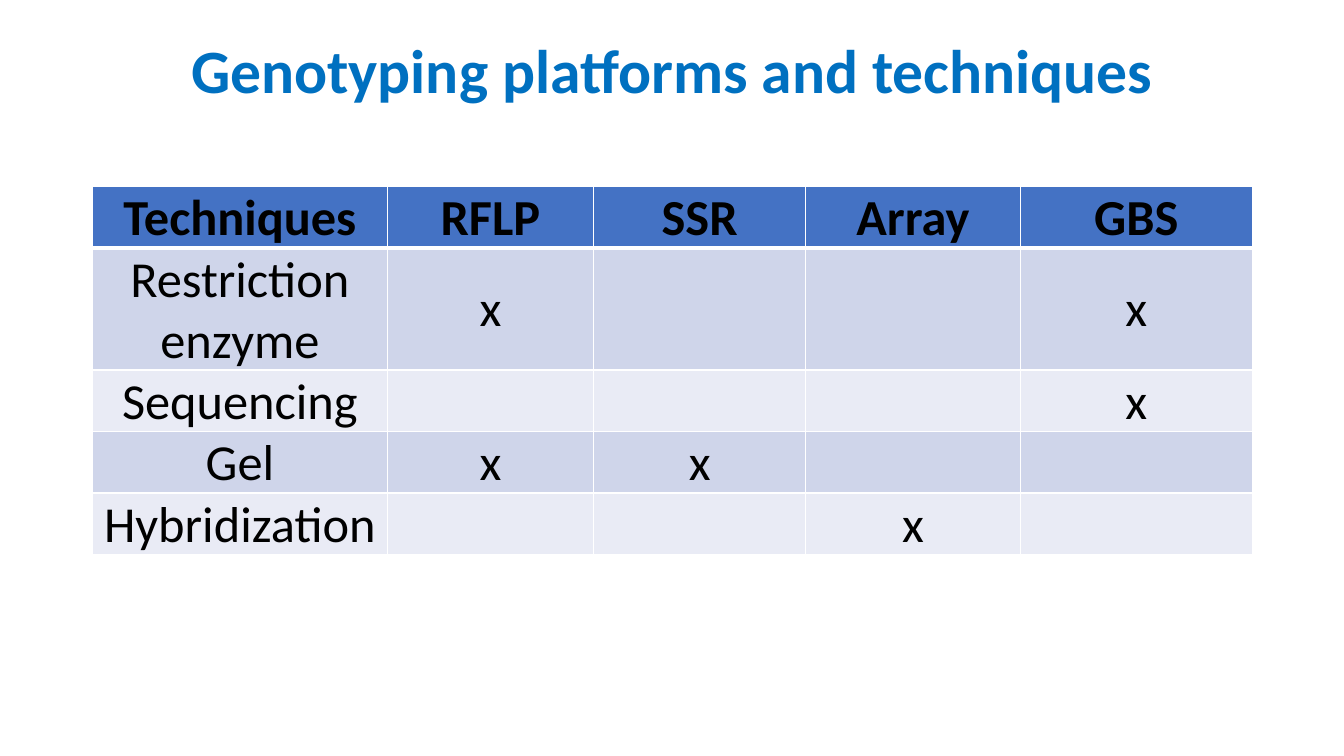
from lxml.etree import SubElement
from pptx import Presentation
from pptx.dml.color import RGBColor
from pptx.enum.text import MSO_ANCHOR, PP_ALIGN
from pptx.oxml.ns import qn
from pptx.util import Pt

BLUE = RGBColor(0x00, 0x70, 0xC0)
BLACK = RGBColor(0x00, 0x00, 0x00)
WHITE = RGBColor(0xFF, 0xFF, 0xFF)
HEADER = RGBColor(0x44, 0x72, 0xC4)
BANDS = [RGBColor(0xE9, 0xEB, 0xF5), RGBColor(0xCF, 0xD5, 0xEA)]

PLATFORMS = ["RFLP", "SSR", "Array", "GBS"]
TECHNIQUES = {
    "Restriction enzyme": ["RFLP", "GBS"],
    "Sequencing": ["GBS"],
    "Gel": ["RFLP", "SSR"],
    "Hybridization": ["Array"],
}
COLUMN_WIDTHS = [292, 205, 210, 213, 230]
ROW_HEIGHT = 41


class SlideBuilder:
    font = "Calibri"
    scale = 9144

    def __init__(self, slide):
        self.slide = slide

    def px(self, length):
        return length * self.scale

    def add_span(self, para, text, size, color, bold):
        para.alignment = PP_ALIGN.CENTER
        span = para.add_run()
        span.text = text
        span.font.name = self.font
        span.font.size = Pt(size)
        span.font.bold = bold
        span.font.color.rgb = color

    def title(self, text, left, top, width, height):
        box = self.slide.shapes.add_textbox(*map(self.px, (left, top, width, height)))
        frame = box.text_frame
        frame.word_wrap = True
        frame.vertical_anchor = MSO_ANCHOR.MIDDLE
        para = frame.paragraphs[0]
        para.line_spacing = 0.9
        self.add_span(para, text, 44, BLUE, True)

    def border(self, cell, side, points):
        properties = cell._tc.get_or_add_tcPr()
        line = SubElement(properties, qn(f"a:ln{side}"), w=str(Pt(points)))
        fill = SubElement(line, qn("a:solidFill"))
        SubElement(fill, qn("a:srgbClr"), val=str(WHITE))

    def cell(self, cell, text, row):
        header = row == 0
        thickness = {"L": 1, "R": 1, "T": 3 if row == 1 else 1, "B": 3 if header else 1}
        for side, points in thickness.items():
            self.border(cell, side, points)
        cell.fill.solid()
        cell.fill.fore_color.rgb = HEADER if header else BANDS[row % 2]
        if text:
            cell.margin_left = cell.margin_right = cell.margin_top = self.px(1)
            cell.margin_bottom = 0
            cell.vertical_anchor = MSO_ANCHOR.BOTTOM if header else MSO_ANCHOR.MIDDLE
            self.add_span(cell.text_frame.paragraphs[0], text, 36, BLACK, header)

    def table(self, rows, left, top, widths, row_height):
        frame = self.slide.shapes.add_table(
            len(rows), len(widths), self.px(left), self.px(top),
            self.px(sum(widths)), self.px(row_height * len(rows)))
        table = frame.table
        for column, width in zip(table.columns, widths):
            column.width = self.px(width)
        for row, texts in enumerate(rows):
            table.rows[row].height = self.px(row_height)
            for column, text in enumerate(texts):
                self.cell(table.cell(row, column), text, row)


def main():
    deck = Presentation()
    deck.slide_width = 1333 * SlideBuilder.scale
    deck.slide_height = 750 * SlideBuilder.scale
    page = SlideBuilder(deck.slides.add_slide(deck.slide_layouts[6]))
    page.title("Genotyping platforms and techniques", 92, 0, 1150, 145)
    rows = [["Techniques", *PLATFORMS]]
    for technique, users in TECHNIQUES.items():
        rows.append([technique, *("x" if name in users else "" for name in PLATFORMS)])
    page.table(rows, 92, 185, COLUMN_WIDTHS, ROW_HEIGHT)
    deck.save("out.pptx")


if __name__ == "__main__":
    main()
